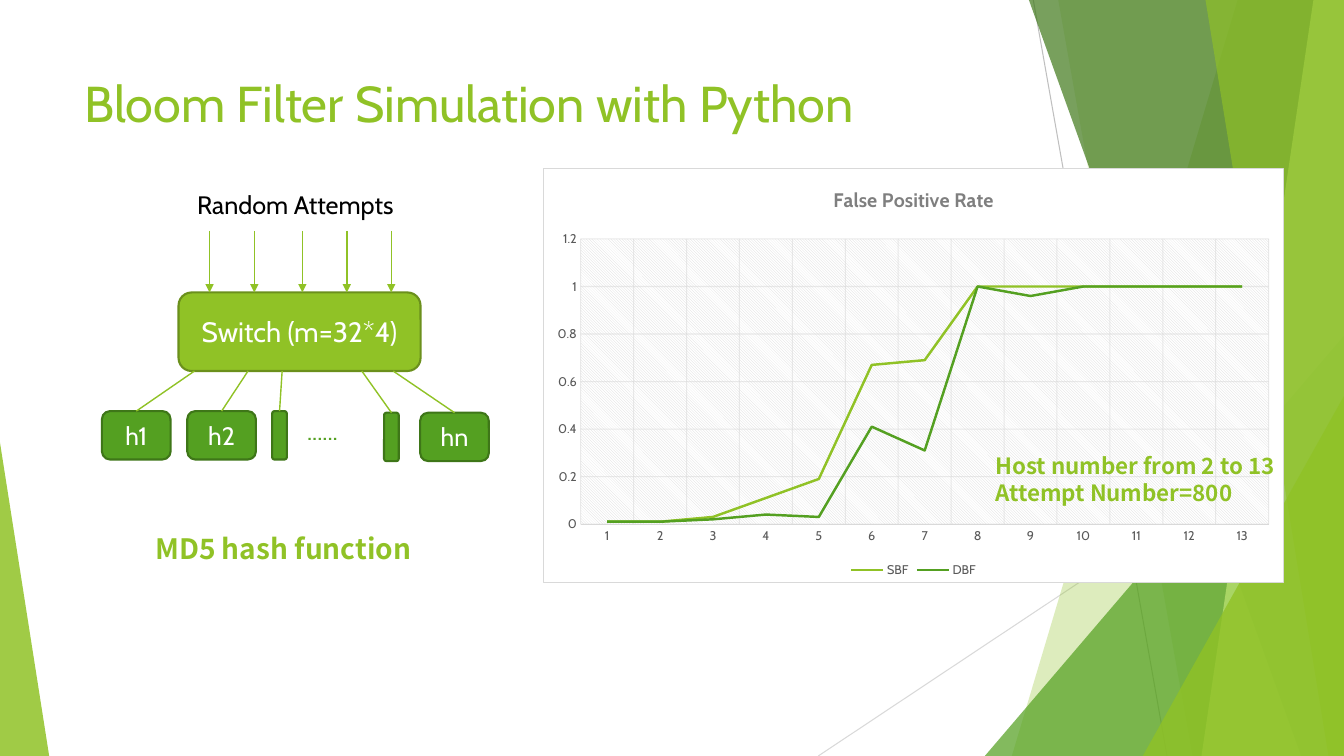
from dataclasses import dataclass

from lxml.etree import SubElement
from pptx import Presentation
from pptx.chart.data import CategoryChartData
from pptx.dml.color import RGBColor
from pptx.enum.chart import XL_CHART_TYPE as ChartType, XL_LEGEND_POSITION as LegendPos
from pptx.enum.chart import XL_TICK_MARK as Tick
from pptx.enum.shapes import MSO_CONNECTOR as Link, MSO_SHAPE as Shape
from pptx.enum.text import MSO_ANCHOR as Anchor, PP_ALIGN as Align
from pptx.oxml import parse_xml
from pptx.oxml.ns import nsdecls, qn
from pptx.util import Cm, Pt

WIDTH, HEIGHT = 33.87, 19.05


@dataclass(frozen=True)
class Theme:
    lime: str = "90C226"
    lime_edge: str = "6B901C"
    green: str = "54A021"
    green_edge: str = "3E7618"
    forest: str = "3F7819"
    pale: str = "C0E474"
    rule: str = "BFBFBF"
    grid: str = "D9D9D9"
    axis_text: str = "595959"
    chart_title: str = "7F7F7F"
    white: str = "FFFFFF"
    black: str = "000000"
    font: str = "Cabin"
    bold_font: str = "Noto Sans CJK SC"
    title: int = 36
    large: int = 20
    body: int = 18
    note: int = 16
    chart_head: int = 14
    axis: int = 9


def paint(fill, color, opacity=100):
    fill.solid()
    fill.fore_color.rgb = RGBColor.from_string(color)
    if opacity < 100:
        for srgb in fill._xPr.iter(qn("a:srgbClr")):
            SubElement(srgb, qn("a:alpha")).set("val", str(opacity * 1000))


def stroke(line, color, width, opacity=100):
    line.width = Pt(width)
    paint(line.fill, color, opacity)


class SlideBuilder:
    def __init__(self, slide, theme):
        self.slide, self.theme = slide, theme

    def style(self, font, size, color, bold=False, name=None):
        font.name, font.size, font.bold = name or self.theme.font, Pt(size), bold
        font.color.rgb = RGBColor.from_string(color)

    def add_lines(self, frame, lines, size, color, bold=False, name=None, align=Align.LEFT):
        for i, words in enumerate(lines):
            para = frame.paragraphs[0] if i == 0 else frame.add_paragraph()
            para.alignment = align
            run = para.add_run()
            run.text = words
            self.style(run.font, size, color, bold, name)

    def text(self, box, lines, size, color, **look):
        frame = self.slide.shapes.add_textbox(*map(Cm, box)).text_frame
        frame.word_wrap = True
        self.add_lines(frame, lines, size, color, **look)

    def line(self, start, end, color, width, arrow=False):
        link = self.slide.shapes.add_connector(Link.STRAIGHT, *map(Cm, (*start, *end)))
        stroke(link.line, color, width)
        if arrow:
            SubElement(link.line._get_or_add_ln(), qn("a:tailEnd")).set("type", "triangle")
        SubElement(link._element.spPr, qn("a:effectLst"))

    def band(self, top_x, bottom_x, color, opacity):
        """Slanted strip from the given edge to the right side of the slide."""
        outline = self.slide.shapes.build_freeform(Cm(top_x), 0)
        corners = [(WIDTH, 0), (WIDTH, HEIGHT), (bottom_x, HEIGHT)]
        outline.add_line_segments([(Cm(x), Cm(y)) for x, y in corners])
        self.finish(outline.convert_to_shape(), color, opacity)

    def triangle(self, box, apex, color, opacity):
        shape = self.slide.shapes.add_shape(Shape.ISOSCELES_TRIANGLE, *map(Cm, box))
        shape.adjustments[0] = apex
        self.finish(shape, color, opacity)

    def finish(self, shape, color, opacity):
        shape.shadow.inherit = False
        paint(shape.fill, color, opacity)
        shape.line.fill.background()

    def node(self, box, label, size, color, edge):
        shape = self.slide.shapes.add_shape(Shape.ROUNDED_RECTANGLE, *map(Cm, box))
        shape.shadow.inherit = False
        paint(shape.fill, color)
        stroke(shape.line, edge, 1.5)
        if label:
            shape.text_frame.vertical_anchor = Anchor.MIDDLE
            self.add_lines(shape.text_frame, [label], size, self.theme.white, align=Align.CENTER)

    def line_chart(self, box, title, categories, series):
        t = self.theme
        data = CategoryChartData()
        data.categories = categories
        for name, _, values in series:
            data.add_series(name, values)
        chart = self.slide.shapes.add_chart(ChartType.LINE, *map(Cm, box), data).chart
        self.style(chart.font, t.axis, t.axis_text)
        self.add_lines(chart.chart_title.text_frame, [title], t.chart_head, t.chart_title,
                       bold=True, align=Align.CENTER)
        chart.has_legend = True
        chart.legend.position = LegendPos.BOTTOM
        chart.legend.include_in_layout = False
        self.style(chart.legend.font, t.axis, t.axis_text)
        for axis in (chart.category_axis, chart.value_axis):
            axis.major_tick_mark = axis.minor_tick_mark = Tick.NONE
            axis.has_major_gridlines = True
            stroke(axis.major_gridlines.format.line, t.grid, 0.75, 54)
            self.style(axis.tick_labels.font, t.axis, t.axis_text)
        stroke(chart.category_axis.format.line, t.grid, 0.75)
        values_axis = chart.value_axis
        values_axis.format.line.fill.background()
        values_axis.minimum_scale, values_axis.maximum_scale = 0, 1.2
        values_axis.major_unit = 0.2
        values_axis.tick_labels.number_format = "General"
        values_axis.tick_labels.number_format_is_linked = False
        chart.plots[0].vary_by_categories = False
        for plotted, (_, color, _) in zip(chart.plots[0].series, series):
            plotted.smooth = False
            stroke(plotted.format.line, color, 1.75)
        self.chart_areas(chart._chartSpace)

    def chart_areas(self, space):
        t = self.theme
        plot = space.chart.plotArea
        # Inner plot position, as shares of the chart
        for old in plot.findall(qn("c:layout")):
            plot.remove(old)
        places = "".join(f'<c:{k} val="{v}"/>' for k, v in
                         [("x", 0.05), ("y", 0.17), ("w", 0.93), ("h", 0.69)])
        plot.insert(0, parse_xml(
            f'<c:layout {nsdecls("c")}><c:manualLayout><c:layoutTarget val="inner"/>'
            f'<c:xMode val="edge"/><c:yMode val="edge"/>{places}</c:manualLayout></c:layout>'))
        # Hatched plot, white chart with a thin border
        solid = '<a:solidFill><a:srgbClr val="{}"/></a:solidFill>'.format
        hatch = (f'<a:pattFill prst="ltDnDiag"><a:fgClr><a:srgbClr val="{t.grid}"/></a:fgClr>'
                 f'<a:bgClr><a:srgbClr val="{t.white}"/></a:bgClr></a:pattFill>')
        border = f'{solid(t.white)}<a:ln w="{Pt(0.75)}">{solid(t.grid)}</a:ln>'
        wrap = f'<c:spPr {nsdecls("c", "a")}>{{}}</c:spPr>'.format
        plot.append(parse_xml(wrap(hatch)))
        space.chart.addnext(parse_xml(wrap(border)))


def main():
    prs = Presentation()
    prs.slide_width, prs.slide_height = Cm(WIDTH), Cm(HEIGHT)
    t = Theme()
    page = SlideBuilder(prs.slides.add_slide(prs.slide_layouts[6]), t)

    # Faceted backdrop
    page.line((26.04, 0), (29.41, HEIGHT), t.rule, 0.75)
    page.line((WIDTH, 10.24), (20.62, HEIGHT), t.grid, 0.75)
    page.band(31.19, 25.5, t.lime, 30)
    page.band(26.67, 30.05, t.lime, 20)
    page.triangle((24.82, 8.46, 9.05, 10.59), 1, t.green, 72)
    page.band(25.93, 32.79, t.forest, 70)
    page.band(33.1, 30.28, t.pale, 70)
    page.band(30.38, 33.48, t.lime, 65)
    page.triangle((28.8, 9.98, 5.07, 9.07), 1, t.lime, 80)
    page.triangle((0, 11.15, 1.24, 7.9), 0, t.lime, 85)

    # Title
    page.text((1.88, 1.7, 23.88, 3.66), ["Bloom Filter Simulation with Python"], t.title, t.lime)

    # Switch with incoming attempts
    switch_top, switch_bottom = 7.37, 9.35
    page.text((3.66, 13.26, 7.14, 1.88), ["MD5 hash function"], t.large, t.lime,
              bold=True, name=t.bold_font)
    page.node((4.5, switch_top, 6.1, switch_bottom - switch_top), "Switch (m=32*4)",
              t.large, t.lime, t.lime_edge)
    page.text((4.72, 4.65, 5.61, 1.02), ["Random Attempts"], t.body, t.black)
    for attempt_x in (5.28, 6.41, 7.62, 8.74, 9.86):
        page.line((attempt_x, 5.82), (attempt_x, switch_top), t.lime, 1, arrow=True)

    # Hosts: label, left, top, width, x where the link leaves the switch
    hosts = [("h1", 2.57, 10.36, 1.73, 4.9), ("h2", 4.72, 10.36, 1.73, 6.25),
             ("", 6.86, 10.36, 0.37, 7.11), ("", 9.68, 10.4, 0.37, 9.12),
             ("hn", 10.59, 10.4, 1.73, 9.91)]
    for label, left, top, width, port_x in hosts:
        page.node((left, top, width, 1.22), label, t.body, t.green, t.green_edge)
        page.line((port_x, switch_bottom), (left + width / 2, top), t.lime, 1)
    page.text((7.49, 10.34, 1.93, 1.02), ["......"], t.body, t.green)

    # False positive rates
    page.line_chart((13.69, 4.24, 18.67, 10.44), "False Positive Rate", [str(n) for n in range(1, 14)], [
        ("SBF", t.lime, [0.01, 0.01, 0.03, 0.11, 0.19, 0.67, 0.69] + [1] * 6),
        ("DBF", t.green, [0.01, 0.01, 0.02, 0.04, 0.03, 0.41, 0.31, 1, 0.96] + [1] * 4)])
    page.text((24.84, 11.28, 8.9, 2.39), ["Host number from 2 to 13", "Attempt Number=800"],
              t.note, t.lime, bold=True, name=t.bold_font)

    prs.save("out.pptx")


if __name__ == "__main__":
    main()
